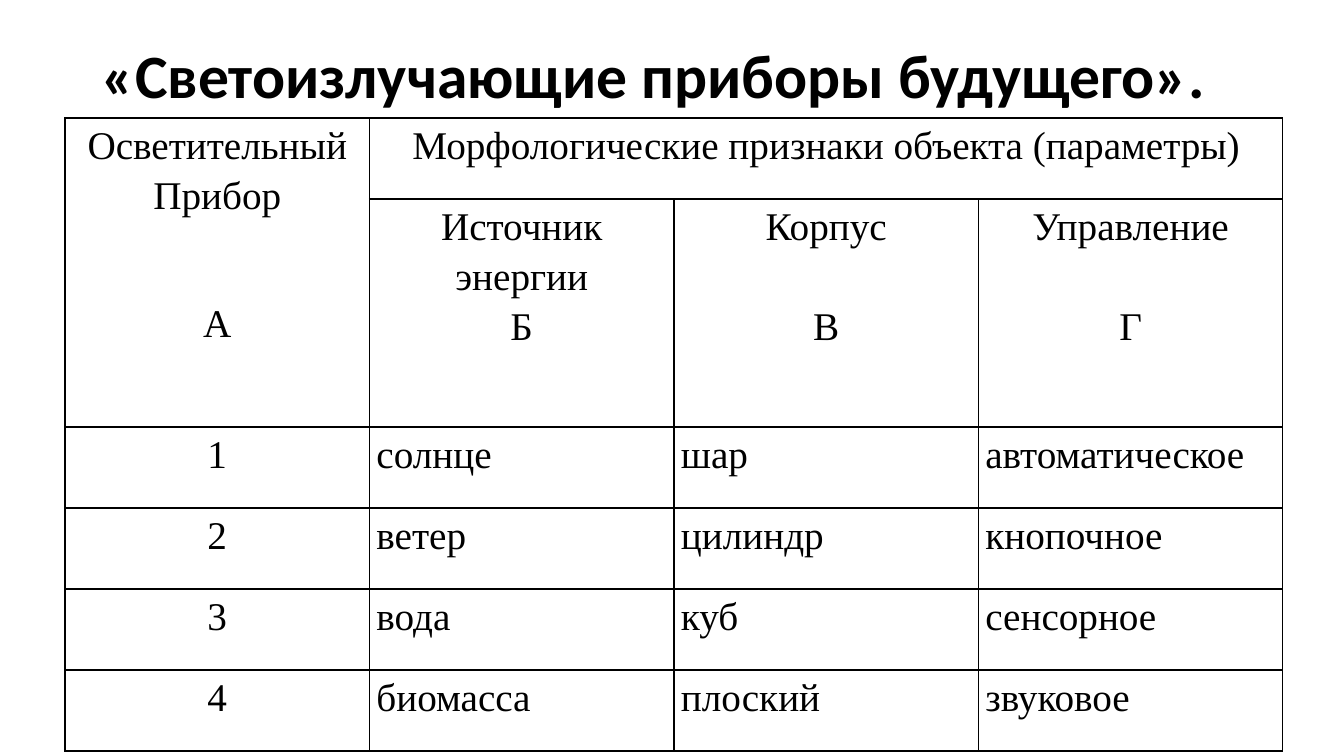
from lxml import etree
from pptx import Presentation
from pptx.dml.color import RGBColor
from pptx.enum import text
from pptx.oxml.ns import qn
from pptx.util import Pt

PX = 12192000 / 1344
COLORS = {"ink": "000000", "paper": "FFFFFF"}
INK = RGBColor.from_string(COLORS["ink"])


def px(length):
    return round(length * PX)


def add_span(para, words, size, font, bold=False):
    span = para.add_run()
    span.text = words
    span.font.size = Pt(size)
    span.font.name = font
    span.font.bold = bold
    span.font.color.rgb = INK


deck = Presentation()
deck.slide_width = px(1344)
deck.slide_height = px(756)
page = deck.slides.add_slide(deck.slide_layouts[5])
page.background.fill.solid()
page.background.fill.fore_color.rgb = RGBColor.from_string(COLORS["paper"])

title = page.shapes.title
title.left, title.top, title.width, title.height = px(92), px(40), px(1160), px(146)
frame = title.text_frame
frame.word_wrap = True
frame.auto_size = text.MSO_AUTO_SIZE.NONE
frame.vertical_anchor = text.MSO_ANCHOR.MIDDLE
frame.margin_left = frame.margin_right = px(10)
frame.margin_top = px(5)
frame.margin_bottom = px(73)
para = frame.paragraphs[0]
para.alignment = text.PP_ALIGN.LEFT
para.line_spacing = 0.9
add_span(para, "«Светоизлучающие приборы будущего».", 44, "Calibri", True)

rows = [
    [["Осветительный", "Прибор", "А"], ["Морфологические признаки объекта (параметры)"], [], []],
    [[], ["Источник энергии", "Б"], ["Корпус", "В"], ["Управление", "Г"]],
    [["1"], ["солнце"], ["шар"], ["автоматическое"]],
    [["2"], ["ветер"], ["цилиндр"], ["кнопочное"]],
    [["3"], ["вода"], ["куб"], ["сенсорное"]],
    [["4"], ["биомасса"], ["плоский"], ["звуковое"]],
]
gaps_before = {(0, 0): 56, (1, 2): 36, (1, 3): 36}
row_heights = [81, 228, 81, 81, 81, 81]
column_width = 1218 / 4

table_box = page.shapes.add_table(6, 4, px(65), px(118), px(1218), px(sum(row_heights)))
table = table_box.table
table.first_row = False
table.horz_banding = False
for column in table.columns:
    column.width = px(column_width)
for row, height in zip(table.rows, row_heights):
    row.height = px(height)
table.cell(0, 0).merge(table.cell(1, 0))
table.cell(0, 1).merge(table.cell(0, 3))

for r, row in enumerate(rows):
    for c, lines in enumerate(row):
        cell = table.cell(r, c)
        cell.margin_left = cell.margin_right = px(7)
        cell.margin_top = cell.margin_bottom = 0
        cell.vertical_anchor = text.MSO_ANCHOR.TOP
        cell.fill.background()
        properties = cell._tc.get_or_add_tcPr()
        for place, side in enumerate(("lnL", "lnR", "lnT", "lnB")):
            border = etree.Element(qn("a:" + side), w=str(Pt(1)))
            fill = etree.SubElement(border, qn("a:solidFill"))
            etree.SubElement(fill, qn("a:srgbClr"), val=COLORS["ink"])
            properties.insert(place, border)
        centred = r < 2 or c == 0
        for i, words in enumerate(lines):
            para = cell.text_frame.paragraphs[0] if i == 0 else cell.text_frame.add_paragraph()
            para.alignment = text.PP_ALIGN.CENTER if centred else text.PP_ALIGN.LEFT
            para.line_spacing = 1.15
            if i and i == len(lines) - 1:
                para.space_before = Pt(gaps_before.get((r, c), 0))
            add_span(para, words, 28, "Times New Roman")

deck.save("out.pptx")
